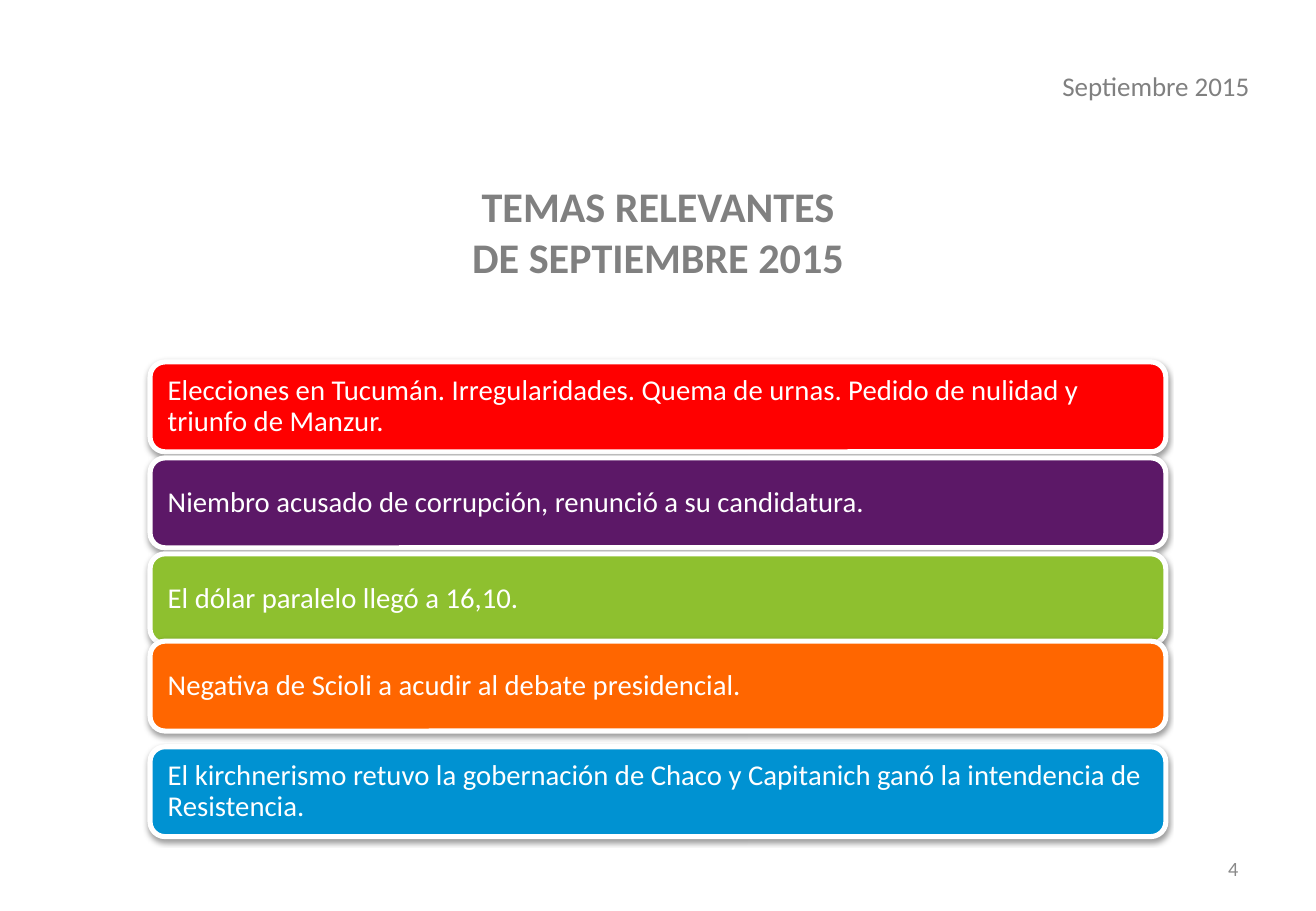
from dataclasses import dataclass
from pptx import Presentation
from pptx.dml.color import RGBColor
from pptx.enum.shapes import MSO_SHAPE
from pptx.enum.text import MSO_ANCHOR, PP_ALIGN
from pptx.oxml import parse_xml
from pptx.oxml.ns import nsdecls, qn
from pptx.util import Inches, Pt

ROUND = MSO_SHAPE.ROUNDED_RECTANGLE
MID, TOP = MSO_ANCHOR.MIDDLE, MSO_ANCHOR.TOP
LEFT, MID_X, RIGHT = PP_ALIGN.LEFT, PP_ALIGN.CENTER, PP_ALIGN.RIGHT


@dataclass
class Theme:
    face: str = "Calibri"
    gray: str = "808080"
    pale: str = "898989"
    white: str = "FFFFFF"
    head: int = 25
    body: int = 17
    date: int = 16
    page: int = 12


theme = Theme()
WIDE, HIGH = 10.83, 7.5

SHADOW = (
    f'<a:outerShdw {nsdecls("a")} blurRad="40000" dist="20000" dir="5400000" '
    'rotWithShape="0"><a:srgbClr val="000000"><a:alpha val="38000"/>'
    '</a:srgbClr></a:outerShdw>'
)


def write(shape, text, size, color, align, anchor=MID, bold=False, pad=(0.1, 0.05), lead=1.0):
    frame = shape.text_frame
    frame.text = text
    form = {
        "word_wrap": True, "vertical_anchor": anchor,
        "margin_left": Inches(pad[0]), "margin_right": Inches(pad[0]),
        "margin_top": Inches(pad[1]), "margin_bottom": Inches(pad[1]),
    }
    for key, value in form.items():
        setattr(frame, key, value)
    for para in frame.paragraphs:
        para.alignment, para.line_spacing = align, lead
        for run in para.runs:
            for key, value in {"name": theme.face, "size": Pt(size), "bold": bold}.items():
                setattr(run.font, key, value)
            run.font.color.rgb = RGBColor.from_string(color)


deck = Presentation()
deck.slide_width, deck.slide_height = Inches(WIDE), Inches(HIGH)
slide = deck.slides.add_slide(deck.slide_layouts.get_by_name("Title Only"))

title = slide.shapes.title
spot = {"left": 0, "top": 1.28, "width": WIDE, "height": HIGH / 6}
for key, value in spot.items():
    setattr(title, key, Inches(value))
write(title, "TEMAS RELEVANTES\vDE SEPTIEMBRE 2015", theme.head, theme.gray, MID_X, bold=True)

topics = [
    (0, "FF0000", "Elecciones en Tucumán. Irregularidades. Quema de urnas. Pedido de nulidad y triunfo de Manzur."),
    (1, "5C1867", "Niembro acusado de corrupción, renunció a su candidatura."),
    (2, "8EC02F", "El dólar paralelo llegó a 16,10."),
    (2.91, "FF6600", "Negativa de Scioli a acudir al debate presidencial."),
    (4.01, "0092D2", "El kirchnerismo retuvo la gobernación de Chaco y Capitanich ganó la intendencia de Resistencia."),
]
BAR_W, BAR_H, FIRST, STEP = 8.36, 0.74, 2.98, 0.79
for row, color, text in topics:
    bar = slide.shapes.add_shape(
        ROUND, Inches((WIDE - BAR_W) / 2), Inches(FIRST + row * STEP), Inches(BAR_W), Inches(BAR_H)
    )
    bar.fill.solid()
    bar.fill.fore_color.rgb = RGBColor.from_string(color)
    bar.line.color.rgb = RGBColor.from_string(theme.white)
    bar.line.width = Pt(3)
    bar.shadow.inherit = False
    bar.element.spPr.find(qn("a:effectLst")).append(parse_xml(SHADOW))
    write(bar, text, theme.body, theme.white, LEFT, pad=(0.11, 0.07), lead=0.9)

notes = [
    ("Septiembre 2015", (8.57, 0.52, 1.81, 0.37), theme.date, theme.gray, TOP),
    ("4", (7.76, 6.95, 2.53, 0.4), theme.page, theme.pale, MID),
]
for text, place, size, color, anchor in notes:
    box = slide.shapes.add_textbox(*map(Inches, place))
    write(box, text, size, color, RIGHT, anchor)

deck.save("out.pptx")
